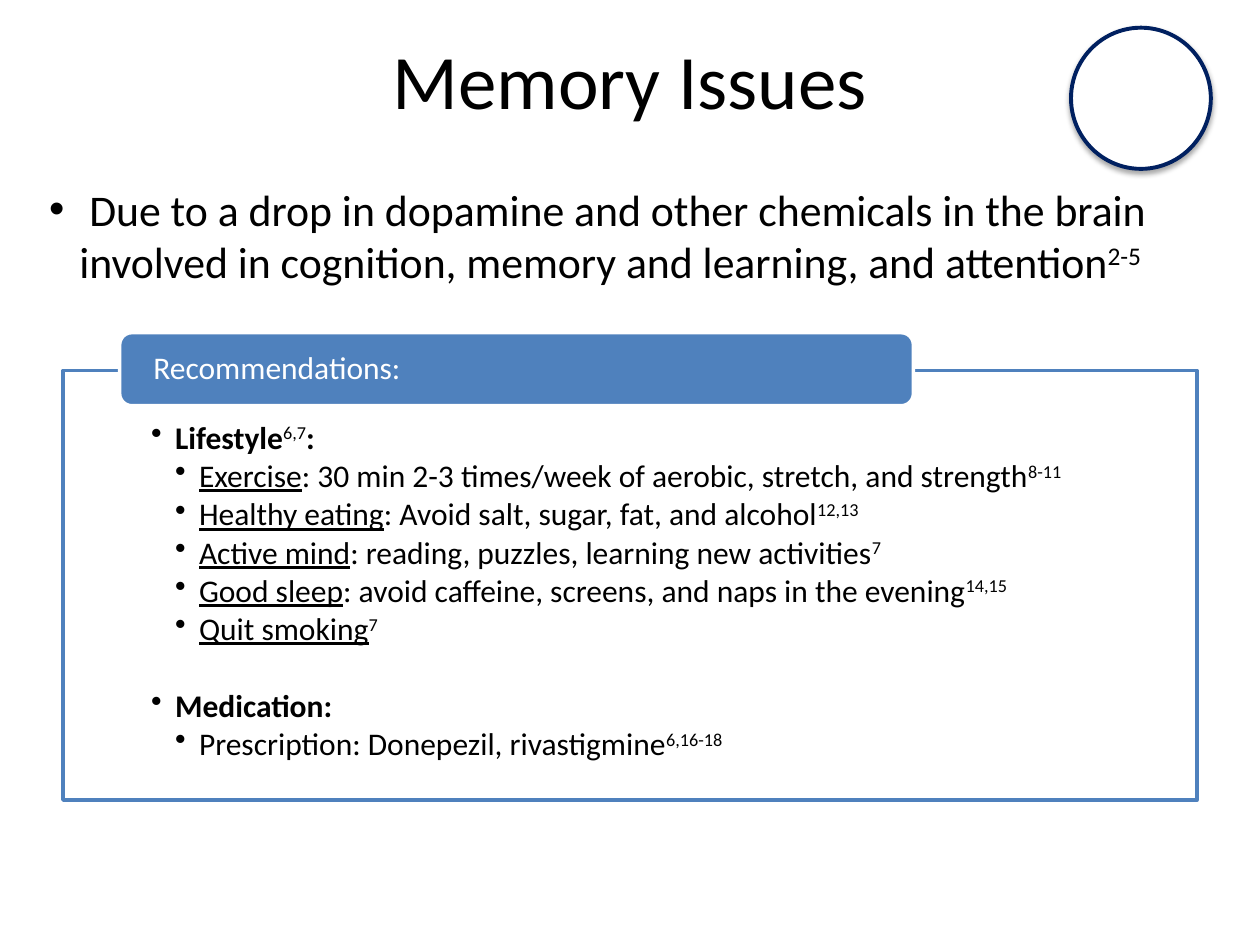
from dataclasses import dataclass

from lxml.etree import SubElement
from pptx import Presentation
from pptx.dml.color import RGBColor as Rgb
from pptx.enum.shapes import MSO_SHAPE as Shape
from pptx.enum.text import MSO_ANCHOR as Anchor, MSO_AUTO_SIZE as AutoSize, PP_ALIGN as Align
from pptx.oxml.ns import qn
from pptx.util import Inches, Pt


@dataclass(frozen=True)
class Theme:
    font: str = "Calibri"
    ink: str = "000000"
    paper: str = "FFFFFF"
    accent: str = "4F81BD"
    navy: str = "002060"
    title_size: float = 44
    intro_size: float = 25
    text_size: float = 18
    line_width: float = 2
    ring_width: float = 2.25


BOLD = {"bold": True}
UNDERLINE = {"underline": True}
RAISED = {"raised": True}

INTRO = [
    (" Due to a drop in dopamine and other chemicals in the brain involved in "
     "cognition, memory and learning, and attention", {}),
    ("2-5", RAISED),
]

# Each group: heading spans, then its items as spans
RECOMMENDATIONS = [
    ([("Lifestyle", BOLD), ("6,7", RAISED), (":", BOLD)], [
        [("Exercise", UNDERLINE),
         (": 30 min 2-3 times/week of aerobic, stretch, and strength", {}), ("8-11", RAISED)],
        [("Healthy eating", UNDERLINE),
         (": Avoid salt, sugar, fat, and alcohol", {}), ("12,13", RAISED)],
        [("Active mind", UNDERLINE),
         (": reading, puzzles, learning new activities", {}), ("7", RAISED)],
        [("Good sleep", UNDERLINE),
         (": avoid caffeine, screens, and naps in the evening", {}), ("14,15", RAISED)],
        [("Quit smoking", UNDERLINE), ("7", RAISED)],
    ]),
    ([("Medication:", BOLD)], [
        [("Prescription: Donepezil, rivastigmine", {}), ("6,16-18", RAISED)],
    ]),
]


def add_span(para, text, *, font, size, color, bold=False, underline=False, raised=False):
    span = para.add_run()
    span.text = text
    style = span.font
    style.name, style.size, style.color.rgb = font, Pt(size), Rgb.from_string(color)
    style.bold, style.underline = bold, underline
    if raised:
        span._r.get_or_add_rPr().set("baseline", "30000")


def add_bullet(para, indent, hang):
    properties = para._p.get_or_add_pPr()
    properties.set("marL", str(Inches(indent)))
    properties.set("indent", str(-Inches(hang)))
    SubElement(properties, qn("a:buChar"), char="•")


def add_alpha(color_element, percent):
    SubElement(color_element, qn("a:alpha"), val=str(percent * 1000))


class SlideBuilder:
    def __init__(self, slide, theme):
        self.slide = slide
        self.theme = theme

    def place(self, box, left, top, width, height):
        box.left, box.top = Inches(left), Inches(top)
        box.width, box.height = Inches(width), Inches(height)

    def frame(self, box, insets, anchor):
        frame = box.text_frame
        frame.word_wrap, frame.auto_size = True, AutoSize.NONE
        frame.vertical_anchor = anchor
        (frame.margin_left, frame.margin_top,
         frame.margin_right, frame.margin_bottom) = map(Inches, insets)
        return frame

    def fill_para(self, para, spans, *, size, color=None, align=Align.LEFT,
                  line_spacing=1.0, before=0, after=0):
        para.alignment, para.line_spacing = align, line_spacing
        para.space_before, para.space_after = Pt(before), Pt(after)
        for text, style in spans:
            add_span(para, text, font=self.theme.font, size=size,
                     color=color or self.theme.ink, **style)

    def title(self, text, *bounds):
        box = self.slide.shapes.title
        self.place(box, *bounds)
        frame = self.frame(box, (0.1, 0.05, 0.1, 0.05), Anchor.MIDDLE)
        self.fill_para(frame.paragraphs[0], [(text, {})],
                       size=self.theme.title_size, align=Align.CENTER)

    def intro(self, spans, *bounds):
        box = self.slide.placeholders[1]
        self.place(box, *bounds)
        para = self.frame(box, (0.1, 0.05, 0.1, 0.05), Anchor.TOP).paragraphs[0]
        self.fill_para(para, spans, size=self.theme.intro_size)
        add_bullet(para, 0.24, 0.24)

    def shape(self, kind, *bounds, fill, line, line_width):
        shape = self.slide.shapes.add_shape(kind, *map(Inches, bounds))
        shape.fill.solid()
        shape.fill.fore_color.rgb = Rgb.from_string(fill)
        shape.line.color.rgb = Rgb.from_string(line)
        shape.line.width = Pt(line_width)
        shape.shadow.inherit = False
        return shape

    def panel(self, groups, *bounds):
        theme = self.theme
        panel = self.shape(Shape.RECTANGLE, *bounds, fill=theme.paper,
                           line=theme.accent, line_width=theme.line_width)
        add_alpha(panel._element.spPr.find(qn("a:solidFill"))[0], 90)
        frame = self.frame(panel, (0.7, 0.41, 0.7, 0.14), Anchor.TOP)
        rows = [(level, spans) for heading, items in groups
                for level, spans in [(1, heading), *((2, item) for item in items)]]
        for index, (level, spans) in enumerate(rows):
            para = frame.add_paragraph() if index else frame.paragraphs[0]
            para.level = level
            self.fill_para(para, spans, size=theme.text_size, line_spacing=0.9, after=2.4,
                           before=22 if index and level == 1 else 0)
            add_bullet(para, 0.19 * level, 0.19)

    def tab(self, text, *bounds):
        theme = self.theme
        tab = self.shape(Shape.ROUNDED_RECTANGLE, *bounds, fill=theme.accent,
                         line=theme.paper, line_width=theme.line_width)
        frame = self.frame(tab, (0.24, 0, 0.24, 0), Anchor.MIDDLE)
        self.fill_para(frame.paragraphs[0], [(text, {})], size=theme.text_size,
                       color=theme.paper, line_spacing=0.9)

    def ring(self, *bounds):
        """Draw a circle with a soft shadow below it."""
        theme = self.theme
        ring = self.shape(Shape.OVAL, *bounds, fill=theme.paper,
                          line=theme.navy, line_width=theme.ring_width)
        effects = ring._element.spPr.find(qn("a:effectLst"))
        shadow = SubElement(effects, qn("a:outerShdw"), blurRad=str(Pt(3.1)),
                            dist=str(Pt(1.8)), dir="5400000", rotWithShape="0")
        add_alpha(SubElement(shadow, qn("a:srgbClr"), val=theme.ink), 35)


def main():
    deck = Presentation()
    deck.slide_width, deck.slide_height = Inches(10), Inches(7.5)
    page = SlideBuilder(deck.slides.add_slide(deck.slide_layouts[1]), Theme())
    page.title("Memory Issues", 0.5, 0, 9, 1.25)
    page.intro(INTRO, 0.29, 1.4, 9.71, 0.94)
    page.panel(RECOMMENDATIONS, 0.5, 2.94, 9, 3.41)
    page.tab("Recommendations:", 0.95, 2.64, 6.3, 0.58)
    page.ring(8.5, 0.22, 1.11, 1.12)
    deck.save("out.pptx")


if __name__ == "__main__":
    main()
